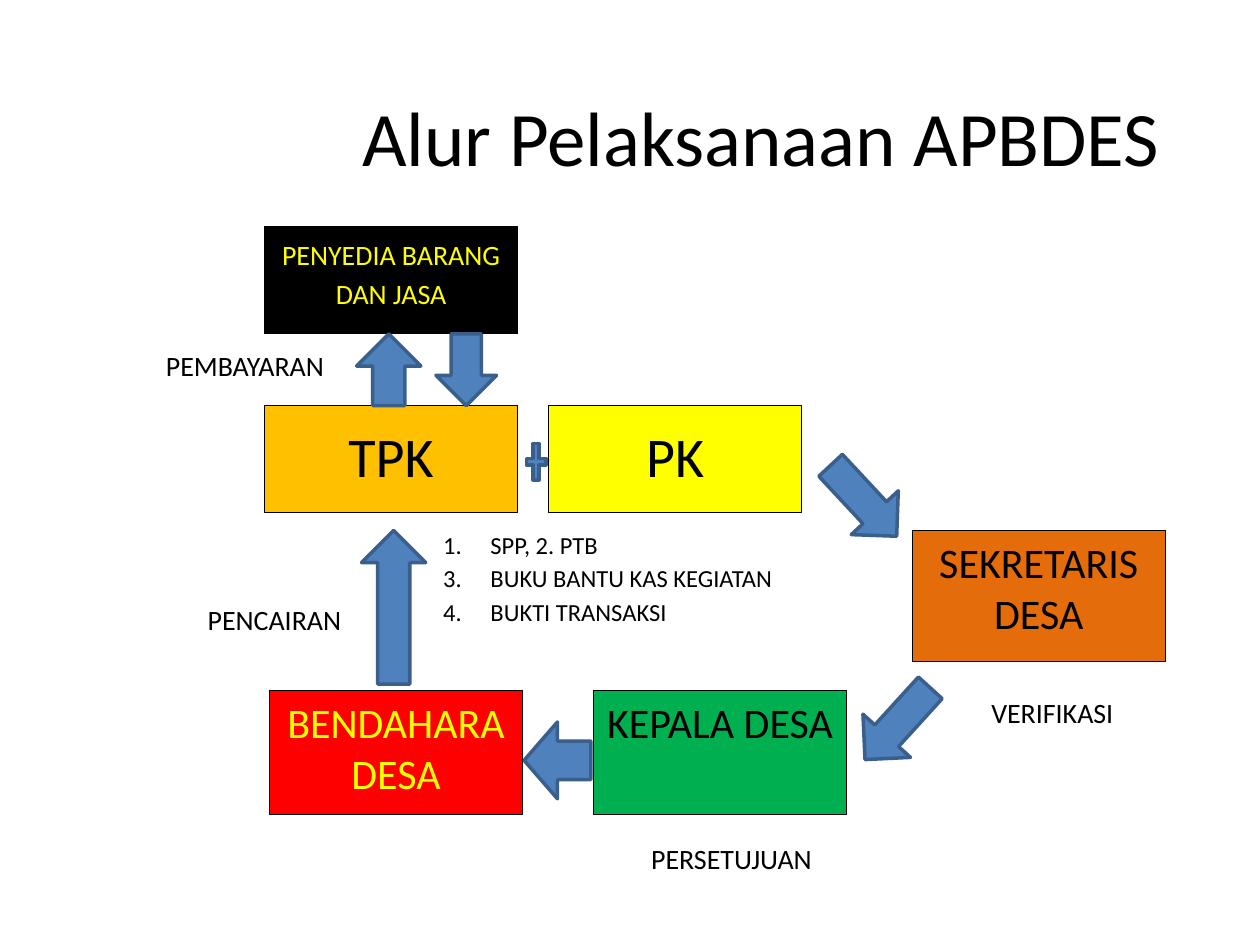
import pptx
import pptx.dml.color
import pptx.enum.shapes
import pptx.enum.text
import pptx.oxml.ns
import pptx.util
from lxml import etree

Pt = pptx.util.Pt
SHAPE = pptx.enum.shapes.MSO_SHAPE
ALIGN = pptx.enum.text.PP_ALIGN
ANCHOR = pptx.enum.text.MSO_ANCHOR
FONT = "Calibri"
COLOURS = {
    "black": "000000", "white": "FFFFFF", "yellow": "FFFF00",
    "green": "00B050", "orange": "E46C0A", "amber": "FFC000",
    "red": "FF0000", "blue": "4F81BD", "navy": "3A5F8C",
}

STAGE_WIDTH = 144.6
STAGES = [
    ("PENYEDIA BARANG DAN JASA", 151.2, 129.6, 61.2, "black", "yellow", 16, 1.15),
    ("KEPALA DESA", 339.1, 394.6, 70.6, "green", "black", 24, 1),
    ("SEKRETARIS DESA", 521.3, 303.1, 74.9, "orange", "black", 24, 1),
    ("PK", 313.5, 231.8, 61.2, "yellow", "black", 32, 1.15),
    ("TPK", 151.2, 231.8, 61.2, "amber", "black", 32, 1.15),
    ("BENDAHARA DESA", 154, 394.6, 70.6, "red", "yellow", 24, 1),
]
SYMBOLS = [
    (SHAPE.MATH_PLUS, (298.8, 249.8, 15.1, 28.1), 0),
    (SHAPE.DOWN_ARROW, (249.1, 190.8, 34.6, 41), 0),
    (SHAPE.DOWN_ARROW, (475.2, 258.5, 36.7, 55.4), 317),
    (SHAPE.DOWN_ARROW, (494.6, 385.9, 36.7, 55.4), 42.3),
    (SHAPE.DOWN_ARROW, (296.6, 415.4, 43.9, 38.2), 90),
    (SHAPE.DOWN_ARROW, (206.6, 303.1, 36.7, 87.8), 180),
    (SHAPE.DOWN_ARROW, (203.8, 190.8, 36.7, 41), 180),
]
DOCUMENTS = [("SPP, 2. PTB", 1), ("BUKU BANTU KAS KEGIATAN", 3), ("BUKTI TRANSAKSI", 3)]
LABEL_HEIGHT = 36
LABELS = [
    ("VERIFIKASI", 559.4, 391, 93.6),
    ("PERSETUJUAN", 365, 474.5, 118.8),
    ("PENCAIRAN", 111.6, 337.7, 97.9),
    ("PEMBAYARAN", 87.8, 193, 113),
]


def colour(name):
    return pptx.dml.color.RGBColor.from_string(COLOURS[name])


def add_block(page, kind, box, fill, line=None, weight=0):
    block = page.shapes.add_shape(kind, *(Pt(length) for length in box))
    block.shadow.inherit = False
    block.fill.solid()
    block.fill.fore_color.rgb = colour(fill)
    if line:
        block.line.color.rgb = colour(line)
        block.line.width = Pt(weight)
    else:
        block.line.fill.background()
    block.text_frame.word_wrap = True
    block.text_frame.vertical_anchor = ANCHOR.TOP
    return block


def write(para, text, size, ink="black", align=ALIGN.LEFT, spacing=1.15):
    para.text = text
    para.alignment = align
    para.line_spacing = spacing
    para.font.name = FONT
    para.font.size = Pt(size)
    para.font.color.rgb = colour(ink)


def add_title(page, box, text):
    title = page.shapes.title
    title.left, title.top, title.width, title.height = (Pt(length) for length in box)
    title.text_frame.vertical_anchor = ANCHOR.MIDDLE
    write(title.text_frame.paragraphs[0], text, 44, align=ALIGN.RIGHT, spacing=0.9)


def add_stage(page, box, text, fill, ink, size, spacing):
    stage = add_block(page, SHAPE.RECTANGLE, box, fill, "black", 0.5)
    write(stage.text_frame.paragraphs[0], text, size, ink, ALIGN.CENTER, spacing)


def add_symbol(page, kind, box, rotation):
    symbol = add_block(page, kind, box, "blue", "navy", 2)
    symbol.rotation = rotation


def add_label(page, box, text):
    label = add_block(page, SHAPE.RECTANGLE, box, "white")
    write(label.text_frame.paragraphs[0], text, 16)


def add_documents(page, box, items):
    frame = add_block(page, SHAPE.RECTANGLE, box, "white").text_frame
    for index, (text, start) in enumerate(items):
        para = frame.paragraphs[0] if index == 0 else frame.add_paragraph()
        props = para._p.get_or_add_pPr()
        props.set("marL", str(Pt(27)))
        props.set("indent", str(-Pt(27)))
        number = etree.SubElement(props, pptx.oxml.ns.qn("a:buAutoNum"), type="arabicPeriod")
        if start > 1:
            number.set("startAt", str(start))
        write(para, text, 14)


def main():
    deck = pptx.Presentation()
    deck.slide_width, deck.slide_height = Pt(720), Pt(540)
    page = deck.slides.add_slide(deck.slide_layouts[5])
    add_title(page, (49.7, 28.8, 620.6, 104.4), "Alur Pelaksanaan APBDES")
    for text, left, top, height, *style in STAGES:
        add_stage(page, (left, top, STAGE_WIDTH, height), text, *style)
    for kind, box, rotation in SYMBOLS:
        add_symbol(page, kind, box, rotation)
    add_documents(page, (246.2, 296.6, 234.7, 77), DOCUMENTS)
    for text, left, top, width in LABELS:
        add_label(page, (left, top, width, LABEL_HEIGHT), text)
    deck.save("out.pptx")


if __name__ == "__main__":
    main()
